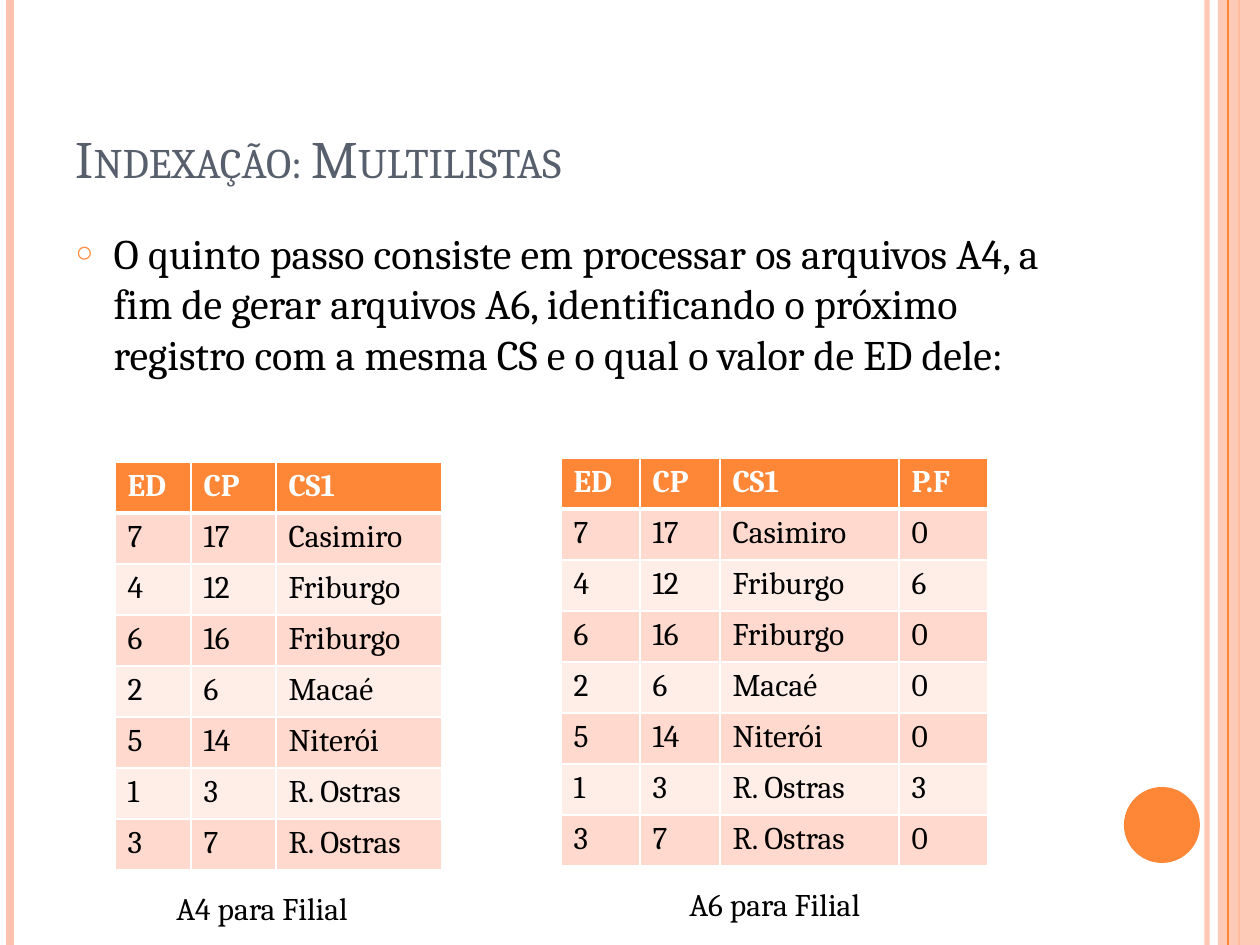
from dataclasses import dataclass

from lxml.etree import SubElement
from pptx import Presentation
from pptx.dml.color import RGBColor
from pptx.enum.shapes import MSO_CONNECTOR as Conn, MSO_SHAPE as Shp
from pptx.enum.text import MSO_ANCHOR as Anchor, MSO_AUTO_SIZE as AutoSize, PP_ALIGN as Align
from pptx.oxml.ns import qn
from pptx.util import Pt

PX_PER_INCH = 126
SLIDE_W, SLIDE_H = 1260, 945


@dataclass(frozen=True)
class Theme:
    font: str = "Cambria"
    accent: str = "FE8637"
    pale: str = "FEC3AE"
    title: str = "575F6D"
    text: str = "000000"
    white: str = "FFFFFF"
    bands: tuple[str, str] = ("FFD9CE", "FFEDE8")
    title_pt: int = 30
    body_pt: int = 24
    small_pt: int = 18


@dataclass(frozen=True)
class Rule:
    x: int
    color: str
    width: float
    opacity: int = 100


@dataclass(frozen=True)
class IndexTable:
    x: int
    y: int
    widths: tuple[int, ...]
    rows: list[tuple[str, ...]]
    label: str
    label_x: int


T = Theme()
ROW_H = 51
LABEL_GAP = 421
RULES = [Rule(1207, T.pale, 3, 93), Rule(10, T.pale, 4.5), Rule(1239, T.accent, 1.5)]
INNER_RULE = Rule(1228, T.accent, 0.75)

A4 = [
    ("ED", "CP", "CS1"),
    ("7", "17", "Casimiro"),
    ("4", "12", "Friburgo"),
    ("6", "16", "Friburgo"),
    ("2", "6", "Macaé"),
    ("5", "14", "Niterói"),
    ("1", "3", "R. Ostras"),
    ("3", "7", "R. Ostras"),
]
NEXT_ED = ("P.F", "0", "6", "0", "0", "0", "3", "0")
A6 = [(*row, nxt) for row, nxt in zip(A4, NEXT_ED)]
TABLES = [
    IndexTable(115, 462, (76, 85, 166), A4, "A4 para Filial", 164),
    IndexTable(561, 458, (79, 80, 179, 89), A6, "A6 para Filial", 677),
]


def px(n: int) -> int:
    return round(n * 914400 / PX_PER_INCH)


def box(*lengths: int) -> list[int]:
    return [px(n) for n in lengths]


def place(sp, *lengths: int) -> None:
    sp.left, sp.top, sp.width, sp.height = box(*lengths)


def rgb(color: str) -> RGBColor:
    return RGBColor.from_string(color)


def write(tf, text: str, *, size: int, color: str = T.text, bold: bool = False,
          small_caps: bool = False):
    p = tf.paragraphs[0]
    p.alignment = Align.LEFT
    r = p.add_run()
    r.text = text
    f = r.font
    f.name, f.size, f.bold = T.font, Pt(size), bold
    f.color.rgb = rgb(color)
    if small_caps:
        r._r.get_or_add_rPr().set("cap", "small")
    return p


def set_opacity(fill_parent, percent: int) -> None:
    clr = next(fill_parent.iter(qn("a:srgbClr")))
    SubElement(clr, qn("a:alpha"), val=str(percent * 1000))


def add_rule(s, rule: Rule) -> None:
    ln = s.shapes.add_connector(Conn.STRAIGHT, *box(rule.x, 0, rule.x, SLIDE_H))
    ln.line.color.rgb = rgb(rule.color)
    ln.line.width = Pt(rule.width)
    if rule.opacity < 100:
        set_opacity(ln.line._ln, rule.opacity)
    SubElement(ln._element.spPr, qn("a:effectLst"))


def add_plain(s, kind: Shp, bounds: list[int], color: str):
    sp = s.shapes.add_shape(kind, *bounds)
    sp.shadow.inherit = False
    sp.fill.solid()
    sp.fill.fore_color.rgb = rgb(color)
    sp.line.fill.background()
    return sp


def add_decoration(s) -> None:
    for rule in RULES:
        add_rule(s, rule)
    band = add_plain(s, Shp.RECTANGLE, box(1218, 0, 42, SLIDE_H), T.pale)
    set_opacity(band._element.spPr, 87)
    add_rule(s, INNER_RULE)
    add_plain(s, Shp.OVAL, box(1124, 787, 76, 76), T.accent)


def add_bullet(p) -> None:
    p.space_before = Pt(6)
    pPr = p._p.get_or_add_pPr()
    pPr.set("marL", str(px(38)))
    pPr.set("indent", str(-px(38)))
    SubElement(SubElement(pPr, qn("a:buClr")), qn("a:srgbClr"), val=T.accent)
    SubElement(pPr, qn("a:buSzPct"), val="70000")
    SubElement(pPr, qn("a:buChar"), char="○")


def fill_placeholders(s) -> None:
    title, body = s.placeholders
    for sp in (title, body):
        s.shapes._spTree.append(sp._element)  # in front of the decoration
        sp.text_frame.auto_size = AutoSize.NONE
    place(title, 63, 38, 1029, 157)
    title.text_frame.vertical_anchor = Anchor.BOTTOM
    write(title.text_frame, "Indexação: Multilistas", size=T.title_pt,
          color=T.title, small_caps=True)
    place(body, 63, 221, 1029, 672)
    add_bullet(write(
        body.text_frame,
        "O quinto passo consiste em processar os arquivos A4, a fim de gerar arquivos A6, "
        "identificando o próximo registro com a mesma CS e o qual o valor de ED dele:",
        size=T.body_pt))


def set_borders(cell, top: int, bottom: int) -> None:
    """Draw white cell edges, with the given widths in points above and below."""
    tcPr = cell._tc.get_or_add_tcPr()
    for side, width in (("L", 1), ("R", 1), ("T", top), ("B", bottom)):
        ln = SubElement(tcPr, qn(f"a:ln{side}"), w=str(Pt(width)))
        SubElement(SubElement(ln, qn("a:solidFill")), qn("a:srgbClr"), val=T.white)


def add_index_table(s, spec: IndexTable) -> None:
    n = len(spec.rows)
    tbl = s.shapes.add_table(
        n, len(spec.widths), *box(spec.x, spec.y, sum(spec.widths), n * ROW_H)).table
    for col, width in zip(tbl.columns, spec.widths):
        col.width = px(width)
    for i, values in enumerate(spec.rows):
        tbl.rows[i].height = px(ROW_H)
        head = i == 0
        for cell, value in zip(tbl.rows[i].cells, values):
            set_borders(cell, top=3 if i == 1 else 1, bottom=3 if head else 1)
            cell.fill.solid()
            cell.fill.fore_color.rgb = rgb(T.accent if head else T.bands[(i - 1) % 2])
            write(cell.text_frame, value, size=T.small_pt, bold=head,
                  color=T.white if head else T.text)
    tf = s.shapes.add_textbox(*box(spec.label_x, spec.y + LABEL_GAP, 231, 50)).text_frame
    tf.word_wrap = False
    tf.auto_size = AutoSize.SHAPE_TO_FIT_TEXT
    write(tf, spec.label, size=T.small_pt)


def main() -> None:
    prs = Presentation()
    prs.slide_width, prs.slide_height = box(SLIDE_W, SLIDE_H)
    s = prs.slides.add_slide(prs.slide_layouts[1])
    add_decoration(s)
    fill_placeholders(s)
    for spec in TABLES:
        add_index_table(s, spec)
    prs.save("out.pptx")


if __name__ == "__main__":
    main()
